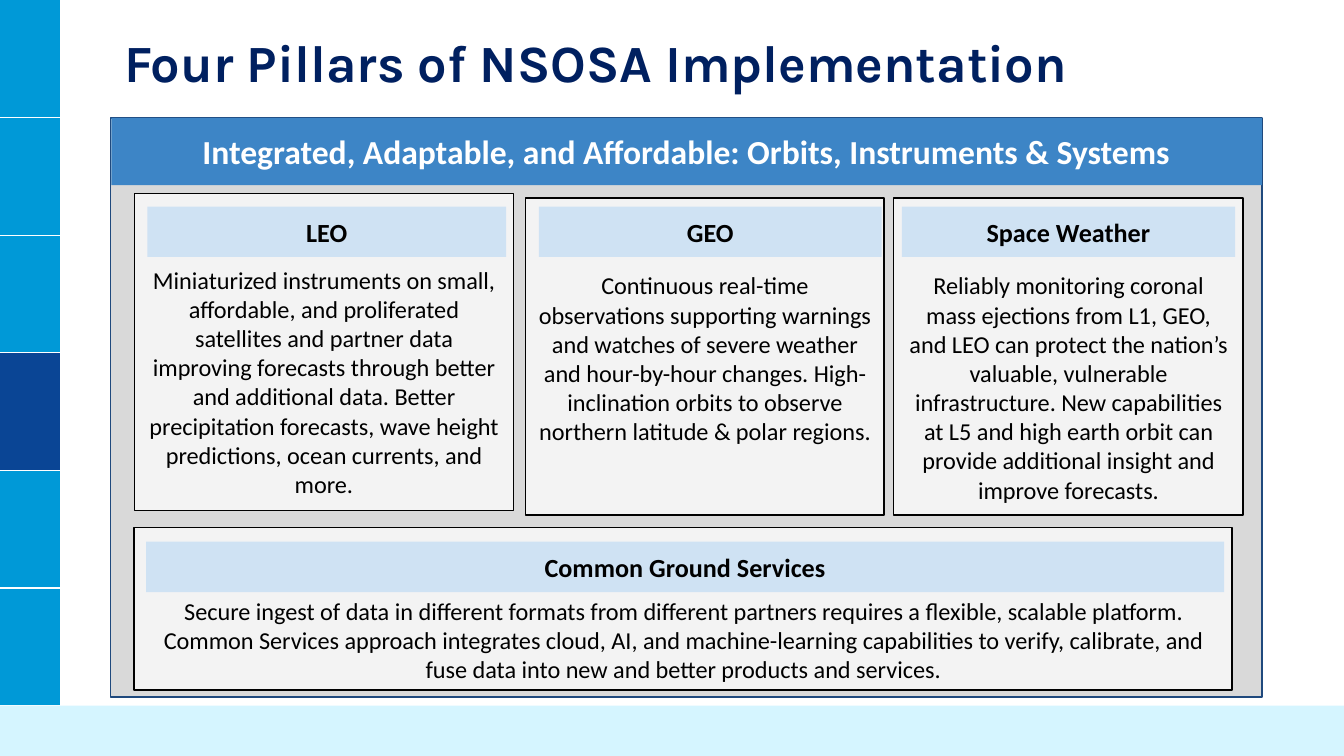
from lxml import etree
from pptx import Presentation
from pptx.dml.color import RGBColor
from pptx.enum.shapes import MSO_CONNECTOR, MSO_SHAPE
from pptx.enum.text import MSO_ANCHOR, MSO_AUTO_SIZE, PP_ALIGN
from pptx.oxml.ns import qn
from pptx.util import Pt

RECTANGLE = MSO_SHAPE.RECTANGLE
STRAIGHT = MSO_CONNECTOR.STRAIGHT
TOP, MIDDLE = MSO_ANCHOR.TOP, MSO_ANCHOR.MIDDLE
LEFT, CENTER = PP_ALIGN.LEFT, PP_ALIGN.CENTER
NO_AUTOFIT = MSO_AUTO_SIZE.NONE

# Content
TITLE = "Four Pillars of NSOSA Implementation"
BANNER = "Integrated, Adaptable, and Affordable: Orbits, Instruments & Systems"
# Each pillar: card and heading as left, top, width, height; text_top is the inset
PILLARS = [
    {"heading": "LEO",
     "body": "Miniaturized instruments on small, affordable, and proliferated "
             "satellites and partner data improving forecasts through better and "
             "additional data. Better precipitation forecasts, wave height "
             "predictions, ocean currents, and more.",
     "card": (72, 103.7, 203, 170), "strip": (79, 110.7, 192.2, 27), "text_top": 38.3},
    {"heading": "GEO",
     "body": "Continuous real-time observations supporting warnings and watches of "
             "severe weather and hour-by-hour changes. High-inclination orbits to "
             "observe northern latitude & polar regions.",
     "card": (281.5, 106, 192.2, 170), "strip": (288.7, 110.7, 183.6, 27), "text_top": 39},
    {"heading": "Space Weather",
     "body": "Reliably monitoring coronal mass ejections from L1, GEO, and LEO can "
             "protect the nation’s valuable, vulnerable infrastructure. New "
             "capabilities at L5 and high earth orbit can provide additional "
             "insight and improve forecasts.",
     "card": (478.8, 106, 187.2, 170), "strip": (483.1, 110.7, 178.6, 27), "text_top": 39},
    {"heading": "Common Ground Services",
     "body": "Secure ingest of data in different formats from different partners "
             "requires a flexible, scalable platform. Common Services approach "
             "integrates cloud, AI, and machine-learning capabilities to verify, "
             "calibrate, and fuse data into new and better products and services.",
     "card": (71.8, 282.7, 588.2, 87), "strip": (78.3, 290.2, 577.6, 27), "text_top": 36.5},
]

THEME = {
    "title": ("Karla", 28, "002060", True),
    "banner": ("Calibri", 18, "FFFFFF", True),
    "heading": ("Calibri", 14, "000000", True),
    "body": ("Calibri", 13, "000000", False),
    "side": "0099D7", "side_active": "0A4595", "footer": "D5F5FF", "divider": "FFFFFF",
    "panel": "D9D9D9", "panel_line": "1F497D", "banner_fill": "3D85C6",
    "card": "F3F3F3", "card_line": "000000", "strip": "CFE2F3",
}
SLIDE_WIDTH, SLIDE_HEIGHT = 720, 405
SIDE_WIDTH, SIDE_STEP, SIDE_CELLS, ACTIVE_CELL = 32.4, 63, 6, 3
SIDE_HEIGHT = SIDE_STEP * SIDE_CELLS
INSET = 7.2


def add_box(slide, place, fill, line=None):
    box = slide.shapes.add_shape(RECTANGLE, *map(Pt, place))
    box.shadow.inherit = False
    box.fill.solid()
    box.fill.fore_color.rgb = RGBColor.from_string(fill)
    if line:
        box.line.color.rgb = RGBColor.from_string(line)
        box.line.width = Pt(0.75)
    else:
        box.line.fill.background()
    return box


def write(box, text, style, align=CENTER, anchor=MIDDLE, top=INSET, bottom=INSET):
    font, size, color, bold = THEME[style]
    frame = box.text_frame
    frame.word_wrap = True
    frame.auto_size = NO_AUTOFIT
    frame.vertical_anchor = anchor
    frame.margin_left = frame.margin_right = Pt(INSET)
    frame.margin_top, frame.margin_bottom = Pt(top), Pt(bottom)
    para = frame.paragraphs[0]
    para.alignment = align
    span = para.add_run()
    span.text = text
    span.font.name = font
    span.font.size = Pt(size)
    span.font.bold = bold
    span.font.color.rgb = RGBColor.from_string(color)


def add_divider(slide, start_x, start_y, end_x, end_y):
    divider = slide.shapes.add_connector(STRAIGHT, *map(Pt, (start_x, start_y, end_x, end_y)))
    divider.line.color.rgb = RGBColor.from_string(THEME["divider"])
    divider.line.width = Pt(0.75)
    etree.SubElement(divider._element.spPr, qn("a:effectLst"))


def main():
    deck = Presentation()
    deck.slide_width, deck.slide_height = Pt(SLIDE_WIDTH), Pt(SLIDE_HEIGHT)
    page = deck.slides.add_slide(deck.slide_layouts[5])

    # Side bar and footer
    add_box(page, (0, 0, SIDE_WIDTH, SIDE_HEIGHT), THEME["side"])
    add_box(page, (0, ACTIVE_CELL * SIDE_STEP, SIDE_WIDTH, SIDE_STEP), THEME["side_active"])
    for cell in range(1, SIDE_CELLS + 1):
        add_divider(page, 0, cell * SIDE_STEP, SIDE_WIDTH, cell * SIDE_STEP)
    add_divider(page, SIDE_WIDTH, 0, SIDE_WIDTH, SIDE_HEIGHT)
    add_box(page, (0, SIDE_HEIGHT, SLIDE_WIDTH, SLIDE_HEIGHT - SIDE_HEIGHT), THEME["footer"])

    # Title
    title = page.shapes.title
    title.left, title.top, title.width, title.height = map(Pt, (59.3, 9.5, 582.5, 46.8))
    write(title, TITLE, "title", align=LEFT)

    # Panel and banner
    add_box(page, (59.2, 63.2, 617, 310.3), THEME["panel"], THEME["panel_line"])
    banner = add_box(page, (59.6, 63.2, 616.4, 36), THEME["banner_fill"])
    write(banner, BANNER, "banner")

    # Pillars
    for pillar in PILLARS:
        card = add_box(page, pillar["card"], THEME["card"], THEME["card_line"])
        write(card, pillar["body"], "body", anchor=TOP, top=pillar["text_top"], bottom=0)
        strip = add_box(page, pillar["strip"], THEME["strip"])
        write(strip, pillar["heading"], "heading")

    deck.save("out.pptx")


if __name__ == "__main__":
    main()
